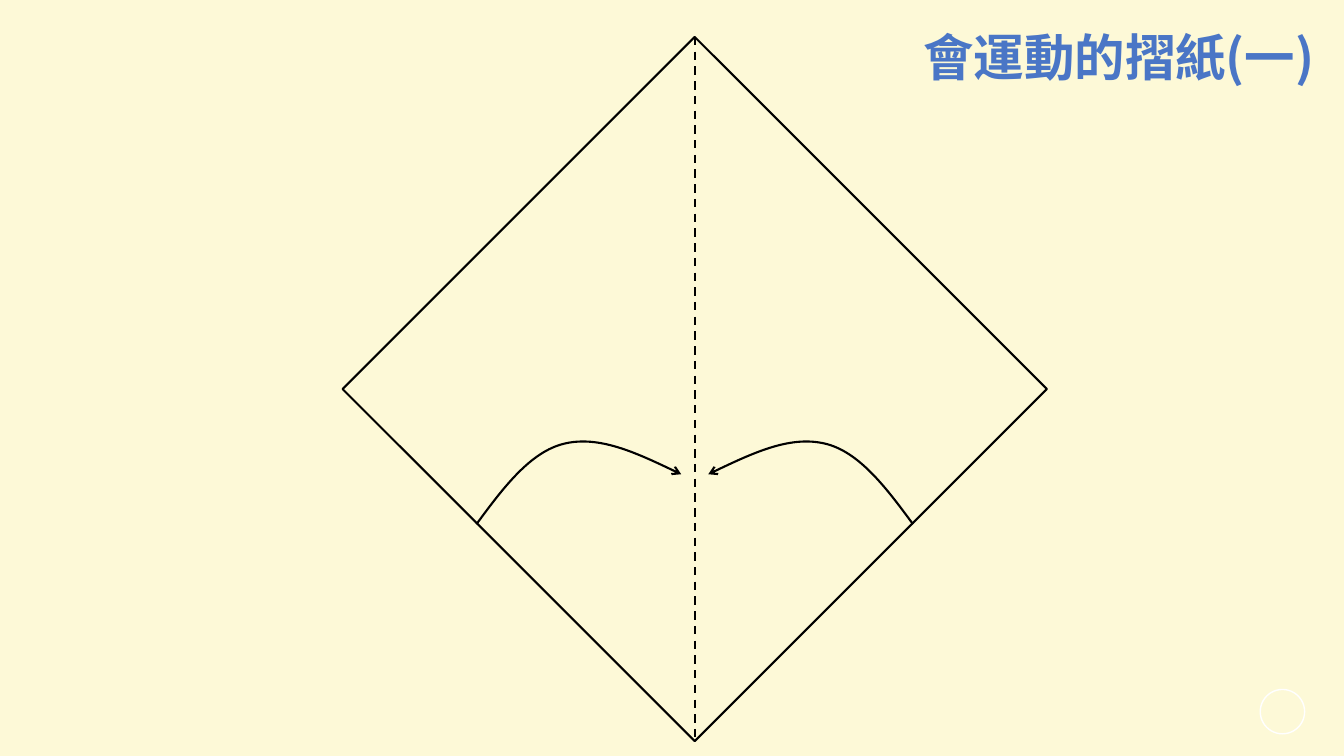
from dataclasses import dataclass
from math import sqrt

from lxml.etree import SubElement
from pptx import Presentation
from pptx.dml.color import RGBColor as RGB
from pptx.enum.dml import MSO_LINE_DASH_STYLE as Dash
from pptx.enum.shapes import MSO_CONNECTOR as Conn, MSO_SHAPE as Shape
from pptx.enum.text import MSO_AUTO_SIZE as AutoSize, PP_ALIGN as Align
from pptx.oxml.ns import qn
from pptx.util import Inches, Pt


@dataclass(frozen=True)
class Theme:
    paper: str = "FDF9D7"
    ink: str = "000000"
    title: str = "4A76C6"
    ring: str = "FFFFFF"
    font: str = "Noto Sans CJK SC"
    title_size: int = 36
    fold_width: float = 1.5
    ring_width: float = 1


THEME = Theme()
WIDTH, HEIGHT = Inches(13.33), Inches(7.5)

# Square sheet standing on its corner, in hundredths of the slide
CENTER_X, CENTER_Y, SIDE = 51.69, 51.47, 65.87

# Right-hand fold curve: (columns from the centre, row); anchors are every third
FOLD_CURVE = [(16.24, 69.33), (14.25, 64.53), (12.23, 59.73), (9.68, 58.67),
              (7.13, 57.6), (4.05, 60.13), (1.01, 62.73)]


def col(n):
    """Hundredths of the slide width."""
    return round(WIDTH * n / 100)


def row(n):
    """Hundredths of the slide height."""
    return round(HEIGHT * n / 100)


def style_line(line, color=THEME.ink, width=THEME.fold_width, dash=None):
    line.color.rgb = RGB.from_string(color)
    line.width = Pt(width)
    if dash is not None:
        line.dash_style = dash


def add_outline(slide, kind, x, y, w, h, rotation=0, **line):
    sp = slide.shapes.add_shape(kind, x, y, w, h)
    sp.shadow.inherit = False
    sp.fill.background()
    sp.rotation = rotation
    style_line(sp.line, **line)


def add_line(slide, x1, y1, x2, y2, **line):
    cxn = slide.shapes.add_connector(Conn.STRAIGHT, x1, y1, x2, y2)
    SubElement(cxn.element.spPr, qn("a:effectLst"))
    style_line(cxn.line, **line)


def add_curved_arrow(slide, points):
    """Draw joined cubic curves with an open arrowhead at the end."""
    anchors = points[::3]
    builder = slide.shapes.build_freeform(*anchors[0], scale=1.0)
    builder.add_line_segments(anchors[1:], close=False)
    sp = builder.convert_to_shape()
    sp.shadow.inherit = False
    sp.fill.background()
    style_line(sp.line)

    # Turn each straight segment into a cubic curve
    left, top = (min(values) for values in zip(*anchors))
    segments = list(sp.element.iter(qn("a:lnTo")))
    for i, segment in enumerate(segments):
        segment.tag = qn("a:cubicBezTo")
        for j, (x, y) in enumerate(points[3 * i + 1:3 * i + 3]):
            pt = SubElement(segment, qn("a:pt"), x=str(x - left), y=str(y - top))
            segment.insert(j, pt)
    SubElement(sp.line._get_or_add_ln(), qn("a:tailEnd"), type="arrow")


def add_text(slide, text, x, y, w, h, *, size, color, font=THEME.font, bold=False):
    tf = slide.shapes.add_textbox(x, y, w, h).text_frame
    tf.word_wrap = True
    tf.auto_size = AutoSize.SHAPE_TO_FIT_TEXT
    p = tf.paragraphs[0]
    p.alignment = Align.LEFT
    r = p.add_run()
    r.text = text
    r.font.size = Pt(size)
    r.font.bold = bold
    r.font.name = font
    r.font.color.rgb = RGB.from_string(color)
    SubElement(r.font._element, qn("a:ea"), typeface=font)


def main():
    prs = Presentation()
    prs.slide_width, prs.slide_height = WIDTH, HEIGHT
    slide = prs.slides.add_slide(prs.slide_layouts[6])
    slide.background.fill.solid()
    slide.background.fill.fore_color.rgb = RGB.from_string(THEME.paper)

    # Corner ring
    ring = row(5.87)
    add_outline(slide, Shape.OVAL, col(93.77), row(91.2), ring, ring,
                color=THEME.ring, width=THEME.ring_width)

    # Title
    add_text(slide, "會運動的摺紙(一)", col(67.97), row(2.8), col(30.68), row(9.47),
             size=THEME.title_size, color=THEME.title, bold=True)

    # Paper sheet and its centre crease
    cx, cy, side = col(CENTER_X), row(CENTER_Y), row(SIDE)
    add_outline(slide, Shape.RECTANGLE, cx - side // 2, cy - side // 2, side, side,
                rotation=45)
    reach = round(side / sqrt(2))
    add_line(slide, cx, cy - reach, cx, cy + reach, dash=Dash.DASH)

    # Fold arrows, mirrored about the crease
    for direction in (-1, 1):
        add_curved_arrow(slide, [(cx + direction * col(dx), row(y))
                                 for dx, y in FOLD_CURVE])

    prs.save("out.pptx")


if __name__ == "__main__":
    main()
